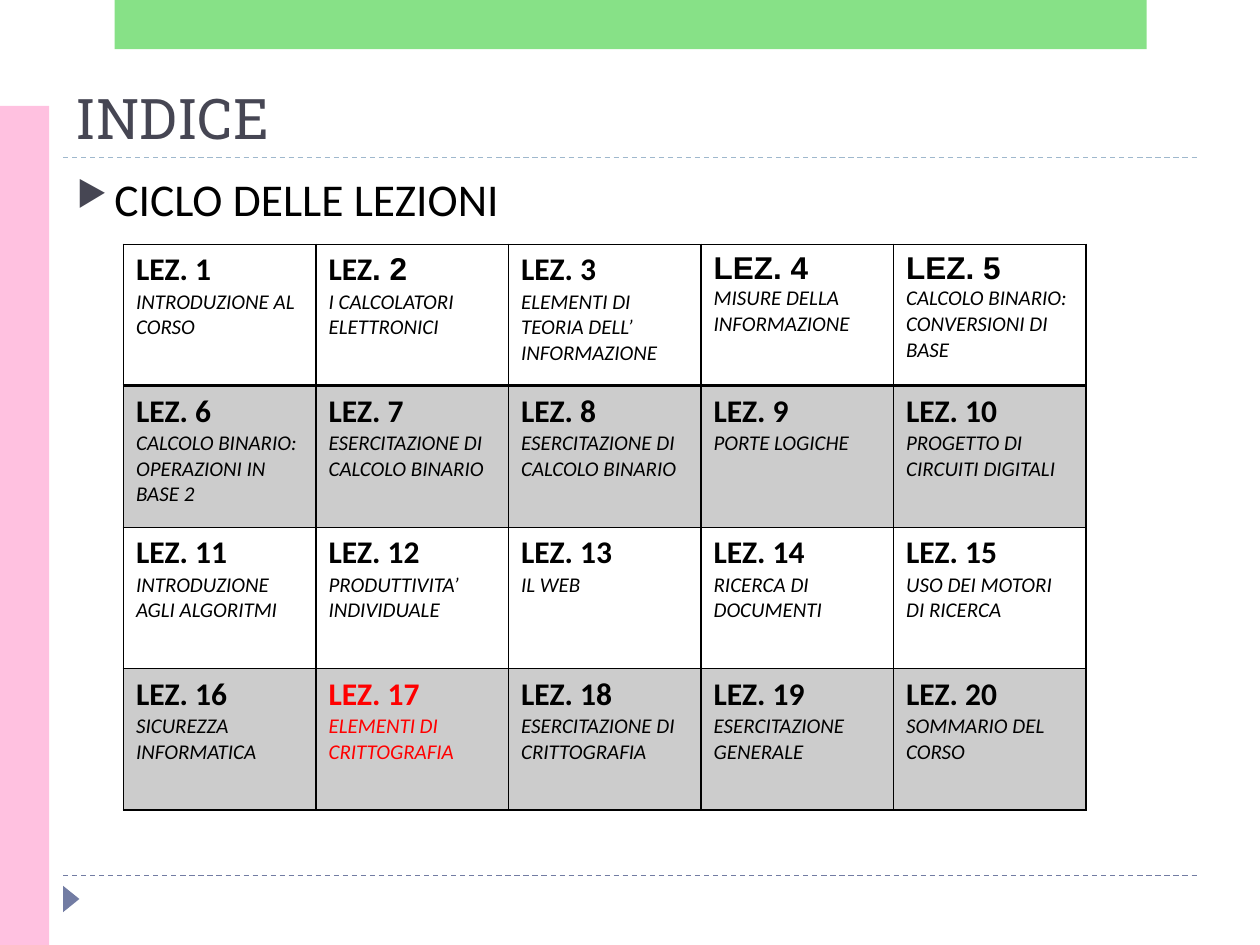
"""Build the course index slide with its grid of twenty lessons."""
from lxml import etree
from pptx import Presentation, util as u
from pptx.dml.color import RGBColor
from pptx.enum import dml, shapes, text
from pptx.oxml import ns

WIDTH, HEIGHT = u.Inches(10), u.Inches(7.5)
COLUMNS, ROWS = 5, 4
BLACK = RGBColor(0x00, 0x00, 0x00)
RED = RGBColor(0xFF, 0x00, 0x00)
SLATE = RGBColor(0x46, 0x46, 0x53)
BLUE = RGBColor(0x72, 0x7C, 0xA3)
PALE_BLUE = RGBColor(0x9F, 0xB8, 0xCD)
PINK = RGBColor(0xFF, 0xC1, 0xE0)
GREEN = RGBColor(0x62, 0xD8, 0x62)
CURRENT_LESSON = 17
ARIAL_LESSONS = (4, 5)
MIXED_LESSON = 2
TOPICS = [
    "INTRODUZIONE AL CORSO",
    "I CALCOLATORI \vELETTRONICI",
    "ELEMENTI DI TEORIA DELL’\vINFORMAZIONE",
    "MISURE DELLA INFORMAZIONE",
    "CALCOLO BINARIO: CONVERSIONI DI BASE",
    "CALCOLO BINARIO: OPERAZIONI IN BASE 2",
    "ESERCITAZIONE DI CALCOLO BINARIO",
    "ESERCITAZIONE DI CALCOLO BINARIO",
    "PORTE LOGICHE",
    "PROGETTO DI CIRCUITI DIGITALI",
    "INTRODUZIONE AGLI ALGORITMI",
    "PRODUTTIVITA’ INDIVIDUALE",
    "IL WEB",
    "RICERCA DI DOCUMENTI",
    "USO DEI MOTORI DI RICERCA",
    "SICUREZZA INFORMATICA",
    "ELEMENTI DI CRITTOGRAFIA",
    "ESERCITAZIONE DI CRITTOGRAFIA",
    "ESERCITAZIONE GENERALE",
    "SOMMARIO DEL CORSO",
]


def add_element(parent, tag, **attributes):
    """Append a DrawingML element and return it."""
    element = etree.SubElement(parent, ns.qn(tag))
    for name, value in attributes.items():
        element.set(name, str(value))
    return element


def paint(fill, holder, color, opacity=100):
    """Give a shape or cell a solid fill of the given opacity."""
    fill.solid()
    fill.fore_color.rgb = color
    if opacity < 100:
        tone = holder.find(ns.qn("a:solidFill"))[0]
        add_element(tone, "a:alpha", val=opacity * 1000)


def style(span, size, color, font="Calibri", bold=False, italic=False):
    """Format one run."""
    span.font.name, span.font.size = font, u.Pt(size)
    span.font.bold, span.font.italic = bold, italic
    span.font.color.rgb = color


def add_shape(page, kind, area, color, opacity=100):
    """Add a plain filled shape."""
    shape = page.shapes.add_shape(kind, *map(u.Inches, area))
    shape.shadow.inherit = False
    paint(shape.fill, shape._element.spPr, color, opacity)
    shape.line.fill.background()
    return shape


def add_rule(page, top, color):
    """Add a dashed line between the side margins."""
    margin, level = int(WIDTH * 0.05), u.Inches(top)
    rule = page.shapes.add_connector(
        shapes.MSO_CONNECTOR.STRAIGHT, margin, level, WIDTH - margin, level)
    rule.line.color.rgb = color
    rule.line.width = u.Pt(0.75)
    rule.line.dash_style = dml.MSO_LINE.DASH
    add_element(rule._element.spPr, "a:effectLst")


def set_title(page):
    """Place and format the title placeholder."""
    title = page.shapes.title
    title.left, title.top = int(WIDTH * 0.05), u.Inches(0.55)
    title.width, title.height = int(WIDTH * 0.9), u.Inches(0.7)
    frame = title.text_frame
    frame.text = "INDICE"
    frame.auto_size = text.MSO_AUTO_SIZE.NONE
    frame.vertical_anchor = text.MSO_ANCHOR.BOTTOM
    para = frame.paragraphs[0]
    para.alignment = text.PP_ALIGN.LEFT
    style(para.runs[0], 32, SLATE, "Roboto Slab")


def add_bullet_line(page):
    """Add the bulleted line above the table."""
    box = page.shapes.add_textbox(*map(u.Inches, (0.51, 1.31, 9, 0.79)))
    box.text_frame.word_wrap = True
    para = box.text_frame.paragraphs[0]
    para.text = "CICLO DELLE LEZIONI"
    properties = para._p.get_or_add_pPr()
    properties.set("marL", str(u.Inches(0.3)))
    properties.set("indent", str(-u.Inches(0.3)))
    tone = add_element(properties, "a:buClr")
    add_element(tone, "a:srgbClr", val=SLATE)
    add_element(properties, "a:buSzPct", val=76000)
    add_element(properties, "a:buChar", char="▶")
    style(para.runs[0], 26, BLACK)


def set_borders(cell, row):
    """Draw the four cell borders, heavier below the first row."""
    properties = cell._tc.get_or_add_tcPr()
    heavy = {0: "B", 1: "T"}.get(row)
    for side in "LRTB":
        line = add_element(properties, f"a:ln{side}", w=u.Pt(2 if side == heavy else 1))
        add_element(add_element(line, "a:solidFill"), "a:srgbClr", val=BLACK)


def fill_cell(cell, number, topic):
    """Write a lesson heading and its topic."""
    color = RED if number == CURRENT_LESSON else BLACK
    frame = cell.text_frame
    frame.text = "LEZ"
    heading = frame.paragraphs[0]
    heading.add_run().text = f". {number}"
    first = "Arial" if number in ARIAL_LESSONS else "Calibri"
    second = "Arial" if number == MIXED_LESSON else first
    for span, font in zip(heading.runs, (first, second)):
        style(span, 18, color, font, bold=True)
    detail = frame.add_paragraph()
    detail.text = topic
    for span in detail.runs:
        style(span, 12, color, italic=True)


def add_lessons(page):
    """Add the lesson table with alternate shaded rows."""
    area = map(u.Inches, (0.98, 1.94, 7.64, 4.49))
    table = page.shapes.add_table(ROWS, COLUMNS, *area).table
    table.first_row = table.horz_banding = False
    for index, topic in enumerate(TOPICS):
        row, column = divmod(index, COLUMNS)
        cell = table.cell(row, column)
        fill_cell(cell, index + 1, topic)
        set_borders(cell, row)
        if row % 2:
            paint(cell.fill, cell._tc.tcPr, BLACK, 20)
        else:
            cell.fill.background()


def main():
    """Assemble and save the slide."""
    deck = Presentation()
    deck.slide_width, deck.slide_height = WIDTH, HEIGHT
    page = deck.slides.add_slide(deck.slide_layouts[5])
    kinds = shapes.MSO_SHAPE
    add_rule(page, 6.95, BLUE)
    add_rule(page, 1.25, PALE_BLUE)
    marker = add_shape(page, kinds.ISOSCELES_TRIANGLE, (0.46, 7.07, 0.21, 0.13), BLUE)
    marker.rotation = 90
    add_shape(page, kinds.RECTANGLE, (0, 0.84, 0.39, 6.66), PINK)
    add_shape(page, kinds.RECTANGLE, (0.91, 0, 8.19, 0.39), GREEN, 76)
    set_title(page)
    add_bullet_line(page)
    add_lessons(page)
    deck.save("out.pptx")


if __name__ == "__main__":
    main()
